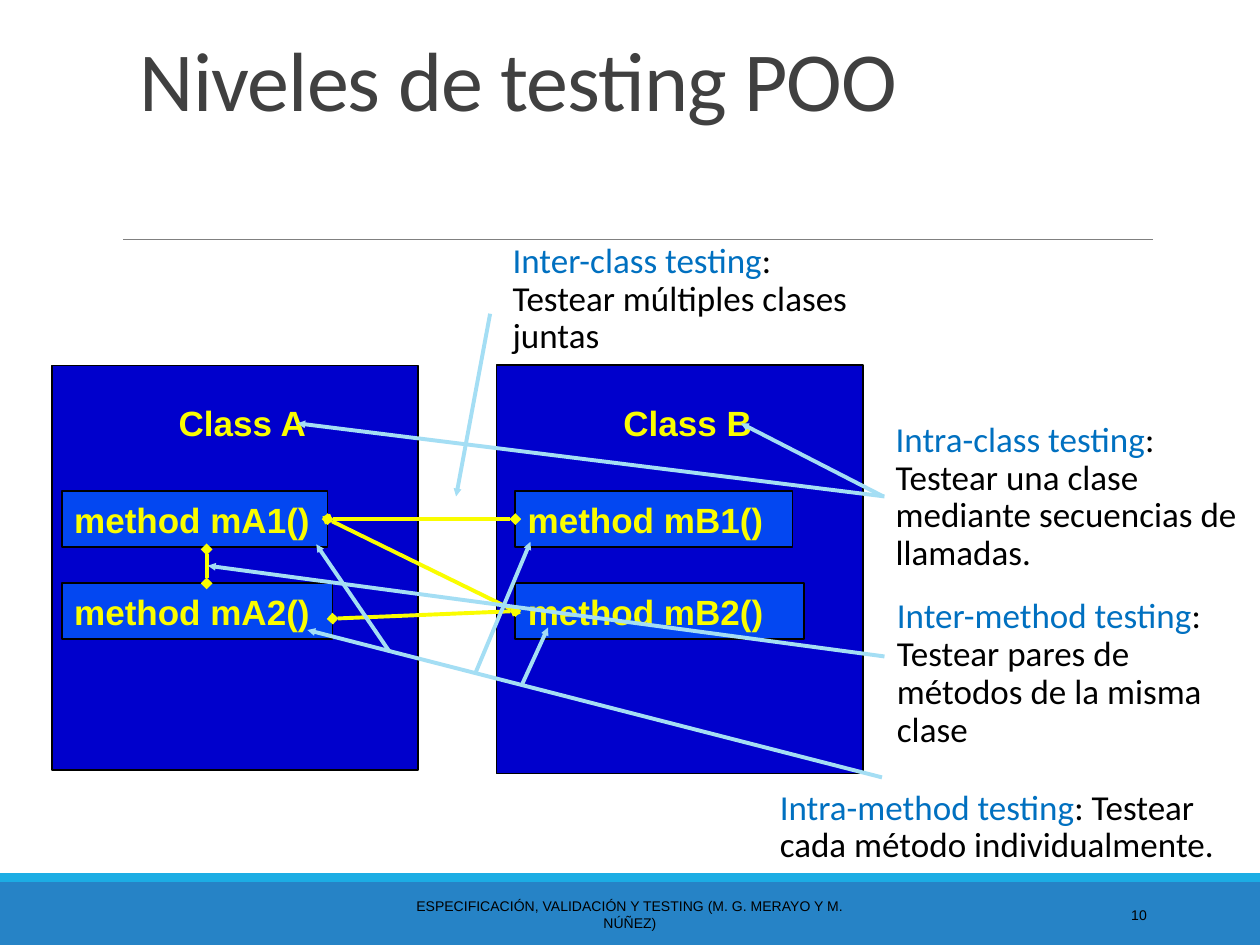
from typing import NamedTuple, Optional

from lxml.etree import SubElement
from pptx import Presentation
from pptx.dml.color import RGBColor
from pptx.enum.shapes import MSO_CONNECTOR, MSO_SHAPE
from pptx.enum.text import MSO_ANCHOR, PP_ALIGN
from pptx.oxml.ns import qn
from pptx.util import Inches, Pt

HUES = {
    "band": "2683C6", "strip": "1CADE4", "rule": "808080",
    "class": "0000CC", "method": "0347F1", "label": "FAFD00",
    "term": "0070C0", "arrow": "A4DEF4", "title": "404040", "ink": "000000",
}


class Method(NamedTuple):
    name: str
    left: float
    top: float
    width: float


class Group(NamedTuple):
    name: str
    left: float
    height: float
    methods: tuple[Method, ...]


class Note(NamedTuple):
    term: str
    rest: str
    left: float
    top: float
    width: float
    height: float


class Link(NamedTuple):
    start: tuple[float, float]
    end: tuple[float, float]
    source: Optional[str] = None  # method joined at its right side
    target: Optional[str] = None  # method joined at its left side


GROUPS = (
    Group("Class A", 0.41, 3.21, (Method("mA1", 0.49, 3.9, 2.11),
                                  Method("mA2", 0.49, 4.63, 2.15))),
    Group("Class B", 3.94, 3.24, (Method("mB1", 4.09, 3.9, 2.2),
                                  Method("mB2", 4.09, 4.63, 2.29))),
)
CALLS = (
    Link((1.64, 4.36), (1.64, 4.63)),
    Link((2.6, 4.14), (4.09, 4.85), "mA1", "mB2"),
    Link((2.64, 4.91), (4.09, 4.86), None, "mB2"),
    Link((2.6, 4.14), (4.09, 4.12), "mA1", "mB1"),
)
NOTES = (
    Note("Intra-class testing", ": Testear una clase mediante secuencias de llamadas.",
         7.01, 3.3, 2.95, 1.21),
    Note("Inter-class testing", ": Testear múltiples clases juntas",
         3.97, 1.88, 3.03, 0.98),
    Note("Inter-method testing", ": Testear pares de métodos de la misma clase",
         7.02, 4.7, 2.95, 1.22),
    Note("Intra-method testing", ": Testear cada método individualmente.",
         6.09, 6.22, 3.85, 0.65),
)
ARROWS = (
    Link((7.01, 3.94), (5.88, 3.36)),
    Link((7.02, 3.94), (2.36, 3.36)),
    Link((7.02, 5.21), (1.65, 4.49)),
    Link((7, 6.17), (2.44, 5)),
    Link((3.09, 5.17), (2.51, 4.32)),
    Link((3.77, 5.35), (4.21, 4.3)),
    Link((4.14, 5.44), (4.35, 4.98)),
    Link((3.89, 2.49), (3.62, 3.94)),
)


def color(name: str) -> RGBColor:
    return RGBColor.from_string(HUES[name])


def write(shape, *parts: tuple[str, str], size=20, font="Calibri", bold=False,
          align=PP_ALIGN.LEFT, anchor=MSO_ANCHOR.TOP, wrap=True, space=1.0, track=0):
    """Fill a shape with one paragraph made of (text, colour) parts."""
    frame = shape.text_frame
    frame.word_wrap = wrap
    frame.vertical_anchor = anchor
    para = frame.paragraphs[0]
    para.alignment = align
    para.line_spacing = space
    for text, hue in parts:
        run = para.add_run()
        run.text = text
        run.font.size = Pt(size)
        run.font.name = font
        run.font.bold = bold
        run.font.color.rgb = color(hue)
        if track:
            run.font._element.set("spc", str(track))


def box(slide, left: float, top: float, width: float, height: float,
        fill: str, line: Optional[str] = None):
    shape = slide.shapes.add_shape(MSO_SHAPE.RECTANGLE, Inches(left), Inches(top),
                                   Inches(width), Inches(height))
    shape.shadow.inherit = False
    shape.fill.solid()
    shape.fill.fore_color.rgb = color(fill)
    if line:
        shape.line.color.rgb = color(line)
        shape.line.width = Pt(1)
    else:
        shape.line.fill.background()
    return shape


def area(slide, left: float, top: float, width: float, height: float):
    return slide.shapes.add_textbox(Inches(left), Inches(top),
                                    Inches(width), Inches(height))


def draw(slide, link: Link, hue: str, width=2.25, head=None, tail=None,
         tip="med", boxes=None):
    line = slide.shapes.add_connector(MSO_CONNECTOR.STRAIGHT,
                                      *map(Inches, link.start + link.end))
    if link.source:
        line.begin_connect(boxes[link.source], 3)
    if link.target:
        line.end_connect(boxes[link.target], 1)
    line.line.color.rgb = color(hue)
    line.line.width = Pt(width)
    stroke = line.line._get_or_add_ln()
    for tag, kind in (("a:headEnd", head), ("a:tailEnd", tail)):
        if kind:
            SubElement(stroke, qn(tag), type=kind, w=tip, len=tip)
    SubElement(line._element.spPr, qn("a:effectLst"))


def main():
    deck = Presentation()
    deck.slide_width, deck.slide_height = Inches(10), Inches(7.5)
    slide = deck.slides.add_slide(deck.slide_layouts[5])

    # Title and rule
    title = slide.shapes.title
    title.left, title.top = Inches(1.01), Inches(0.09)
    title.width, title.height = Inches(8.56), Inches(0.98)
    write(title, ("Niveles de testing POO", "title"), size=48,
          anchor=MSO_ANCHOR.BOTTOM, space=0.85, track=-50)
    draw(slide, Link((0.98, 1.9), (9.15, 1.9)), "rule", width=0.5)

    # Footer
    box(slide, 0, 7, 10, 0.5, "band")
    box(slide, 0, 6.93, 10, 0.07, "strip")
    small = dict(size=8, font="Arial", anchor=MSO_ANCHOR.MIDDLE)
    write(area(slide, 3.02, 7.06, 3.96, 0.4),
          ("ESPECIFICACIÓN, VALIDACIÓN Y TESTING (M. G. MERAYO Y M. NÚÑEZ)", "ink"),
          align=PP_ALIGN.CENTER, **small)
    write(area(slide, 8.12, 7.06, 1.08, 0.4), ("10", "ink"),
          align=PP_ALIGN.RIGHT, **small)

    # Classes and their methods
    boxes = {}
    label = dict(font="Arial", bold=True)
    for group in GROUPS:
        box(slide, group.left, 2.9, 2.91, group.height, "class", "ink")
        write(area(slide, group.left + 0.91, 3.14, 1.23, 0.44),
              (group.name, "label"), wrap=False, **label)
        for item in group.methods:
            shape = box(slide, item.left, item.top, item.width, 0.44, "method", "ink")
            write(shape, (f"method {item.name}()", "label"),
                  anchor=MSO_ANCHOR.MIDDLE, **label)
            boxes[item.name] = shape

    # Calls between methods
    for call in CALLS:
        draw(slide, call, "label", head="diamond", tail="diamond", boxes=boxes)

    # Testing levels and what they point to
    for note in NOTES:
        write(area(slide, note.left, note.top, note.width, note.height),
              (note.term, "term"), (note.rest, "ink"), space=0.9)
    for arrow in ARROWS:
        draw(slide, arrow, "arrow", tail="triangle", tip="sm")

    deck.save("out.pptx")


if __name__ == "__main__":
    main()
